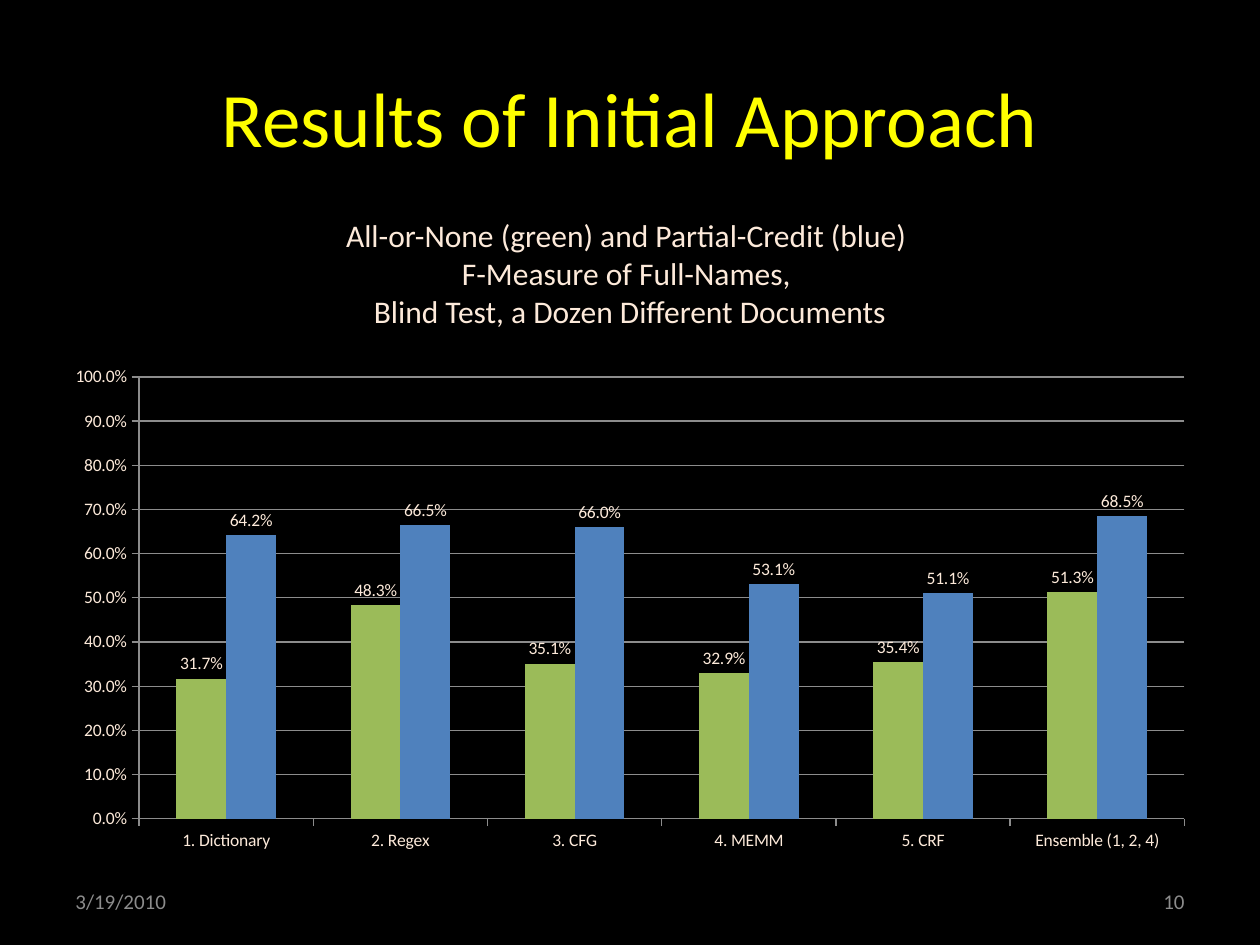
from pptx import Presentation
from pptx.chart.data import CategoryChartData
from pptx.dml.color import RGBColor
from pptx.enum.chart import XL_CHART_TYPE, XL_LABEL_POSITION, XL_TICK_MARK
from pptx.enum.text import MSO_ANCHOR, PP_ALIGN
from pptx.util import Pt

BLACK = RGBColor(0x00, 0x00, 0x00)
YELLOW = RGBColor(0xFF, 0xFF, 0x00)
CREAM = RGBColor(0xFD, 0xEA, 0xDA)
GRAY = RGBColor(0x8C, 0x8C, 0x8C)
GREEN = RGBColor(0x9B, 0xBB, 0x59)
BLUE = RGBColor(0x4F, 0x81, 0xBD)
FONT = "Calibri"
PERCENT = "0.0%"

TITLE = "Results of Initial Approach"
SUBTITLE = [
    "All-or-None (green) and Partial-Credit (blue) ",
    "F-Measure of Full-Names, ",
    "Blind Test, a Dozen Different Documents",
]
DATE = "3/19/2010"
SLIDE_NUMBER = "10"
METHODS = ["1. Dictionary", "2. Regex", "3. CFG", "4. MEMM", "5. CRF", "Ensemble (1, 2, 4)"]
SERIES = [
    ("Series 1", GREEN, [0.317, 0.483, 0.351, 0.329, 0.354, 0.513]),
    ("Series 2", BLUE, [0.642, 0.665, 0.66, 0.531, 0.511, 0.685]),
]

SLIDE_WIDTH, SLIDE_HEIGHT = 720, 540
MARGIN = 36
FOOTER_TOP, FOOTER_WIDTH, FOOTER_HEIGHT = 500.5, 168, 28.75


def style_font(font, size, color):
    font.name = FONT
    font.size = Pt(size)
    font.color.rgb = color


def write_lines(shape, lines, size, color, alignment, anchor):
    frame = shape.text_frame
    frame.word_wrap = True
    frame.vertical_anchor = anchor
    frame.text = "\n".join(lines)
    for paragraph in frame.paragraphs:
        paragraph.alignment = alignment
        style_font(paragraph.font, size, color)


def add_text(slide, box, *style):
    write_lines(slide.shapes.add_textbox(*map(Pt, box)), *style)


def add_title(slide):
    title = slide.shapes.title
    title.left, title.top = Pt(MARGIN), Pt(21.6)
    title.width, title.height = Pt(SLIDE_WIDTH - 2 * MARGIN), Pt(90)
    write_lines(title, [TITLE], 44, YELLOW, PP_ALIGN.CENTER, MSO_ANCHOR.MIDDLE)


def add_results_chart(slide):
    data = CategoryChartData(number_format=PERCENT)
    data.categories = METHODS
    for name, _, values in SERIES:
        data.add_series(name, values)
    chart = slide.shapes.add_chart(
        XL_CHART_TYPE.COLUMN_CLUSTERED, Pt(30), Pt(204), Pt(660), Pt(288), data
    ).chart
    chart.has_legend = False
    chart.has_title = False
    style_font(chart.font, 10, CREAM)

    plot = chart.plots[0]
    plot.gap_width = 150
    plot.overlap = 0
    plot.vary_by_categories = False
    for series, (_, color, _) in zip(plot.series, SERIES):
        series.format.fill.solid()
        series.format.fill.fore_color.rgb = color
        labels = series.data_labels
        labels.show_value = True
        labels.number_format = PERCENT
        labels.number_format_is_linked = False
        labels.position = XL_LABEL_POSITION.OUTSIDE_END
        style_font(labels.font, 10, CREAM)

    for axis in (chart.category_axis, chart.value_axis):
        axis.major_tick_mark = XL_TICK_MARK.OUTSIDE
        axis.format.line.color.rgb = GRAY
        style_font(axis.tick_labels.font, 10, CREAM)

    value_axis = chart.value_axis
    value_axis.minimum_scale = 0
    value_axis.maximum_scale = 1
    value_axis.major_unit = 0.1
    value_axis.major_gridlines.format.line.color.rgb = GRAY
    value_axis.tick_labels.number_format = PERCENT
    value_axis.tick_labels.number_format_is_linked = False


def main():
    presentation = Presentation()
    presentation.slide_width = Pt(SLIDE_WIDTH)
    presentation.slide_height = Pt(SLIDE_HEIGHT)
    slide = presentation.slides.add_slide(presentation.slide_layouts[5])
    slide.background.fill.solid()
    slide.background.fill.fore_color.rgb = BLACK

    add_title(slide)
    footers = [
        (SLIDE_NUMBER, SLIDE_WIDTH - MARGIN - FOOTER_WIDTH, PP_ALIGN.RIGHT),
        (DATE, MARGIN, PP_ALIGN.LEFT),
    ]
    for text, left, alignment in footers:
        box = (left, FOOTER_TOP, FOOTER_WIDTH, FOOTER_HEIGHT)
        add_text(slide, box, [text], 12, GRAY, alignment, MSO_ANCHOR.MIDDLE)
    add_results_chart(slide)
    add_text(slide, (165, 120, 390, 72.7), SUBTITLE, 18, CREAM, PP_ALIGN.CENTER, MSO_ANCHOR.TOP)

    presentation.save("out.pptx")


if __name__ == "__main__":
    main()
